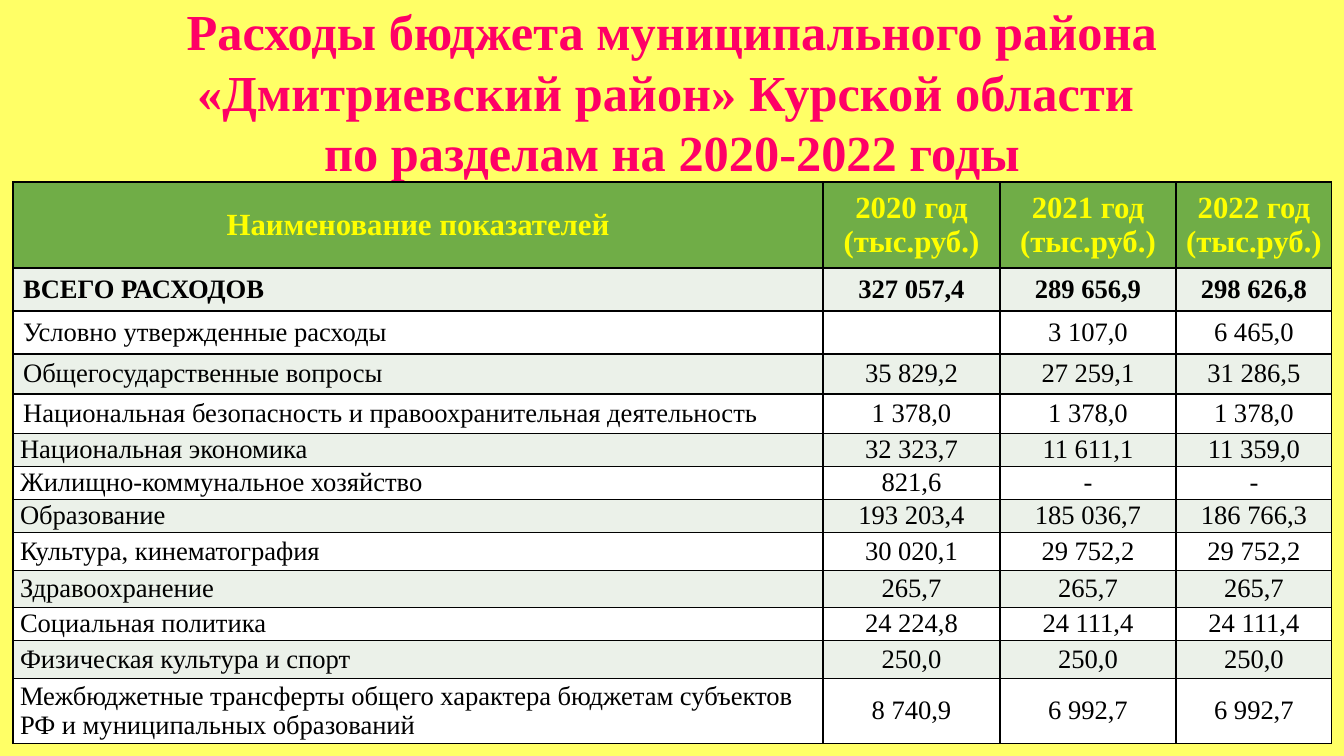
import pptx
import pptx.util
import pptx.dml.color
import pptx.enum.text
from lxml import etree

TITLE = ("Расходы бюджета муниципального района «Дмитриевский район» Курской области "
         "\vпо разделам на 2020-2022 годы")
HEADER = ("Наименование показателей", "2020 год (тыс.руб.)", "2021 год (тыс.руб.)",
          "2022 год (тыс.руб.)")
# Each entry: row height in px, then the cell texts
ROWS = [
    (86, HEADER),
    (43, ("ВСЕГО РАСХОДОВ", "327 057,4", "289 656,9", "298 626,8")),
    (43, ("Условно утвержденные расходы", "", "3 107,0", "6 465,0")),
    (40, ("Общегосударственные вопросы", "35 829,2", "27 259,1", "31 286,5")),
    (39, ("Национальная безопасность и правоохранительная деятельность",
          "1 378,0", "1 378,0", "1 378,0")),
    (33, ("Национальная экономика", "32 323,7", "11 611,1", "11 359,0")),
    (33, ("Жилищно-коммунальное хозяйство", "821,6", "-", "-")),
    (33, ("Образование", "193 203,4", "185 036,7", "186 766,3")),
    (38, ("Культура, кинематография", "30 020,1", "29 752,2", "29 752,2")),
    (37, ("Здравоохранение", "265,7", "265,7", "265,7")),
    (33, ("Социальная политика", "24 224,8", "24 111,4", "24 111,4")),
    (38, ("Физическая культура и спорт", "250,0", "250,0", "250,0")),
    (65, ("Межбюджетные трансферты общего характера бюджетам субъектов РФ "
          "и муниципальных образований", "8 740,9", "6 992,7", "6 992,7")),
]
COLUMN_WIDTHS = (810, 177, 176, 156)
WIDE_INSET_ROWS = 5  # labels of the first rows keep the default insets
FONT = "Times New Roman"
COLORS = {"page": "FFFF66", "title": "FF0066", "header": "70AD47", "header text": "FFFF00",
          "band": "EBF1E9", "plain": "FFFFFF", "ink": "000000"}
PAGE_WIDTH, PAGE_HEIGHT = 1344, 756
TABLE_LEFT, TABLE_TOP = 13, 182
SCALE = 12192000 / PAGE_WIDTH


def px(length):
    return pptx.util.Emu(round(length * SCALE))


def rgb(name):
    return pptx.dml.color.RGBColor.from_string(COLORS[name])


def format_paragraph(para, size, color, bold, centered):
    align = pptx.enum.text.PP_ALIGN
    para.alignment = align.CENTER if centered else align.LEFT
    para.font.name = FONT
    para.font.size = pptx.util.Pt(size)
    para.font.bold = bold
    para.font.color.rgb = rgb(color)


def add_borders(cell):
    properties = cell._tc.get_or_add_tcPr()
    namespace = "http://schemas.openxmlformats.org/drawingml/2006/main"
    for index, side in enumerate("LRTB"):
        line = etree.fromstring(
            f'<a:ln{side} xmlns:a="{namespace}" w="12700"><a:solidFill>'
            f'<a:srgbClr val="{COLORS["ink"]}"/></a:solidFill></a:ln{side}>')
        properties.insert(index, line)


def add_title(page):
    box = page.shapes.title
    box.left, box.top, box.width, box.height = px(0), px(0), px(PAGE_WIDTH), px(TABLE_TOP)
    frame = box.text_frame
    frame.text = TITLE
    frame.word_wrap = True
    frame.auto_size = pptx.enum.text.MSO_AUTO_SIZE.NONE
    frame.vertical_anchor = pptx.enum.text.MSO_ANCHOR.MIDDLE
    frame.margin_top = frame.margin_bottom = 0
    para = frame.paragraphs[0]
    para.line_spacing = 1.0
    format_paragraph(para, 36, "title", True, True)


def fill_cell(cell, text, row, column):
    header = row == 0
    cell.text = text
    cell.vertical_anchor = pptx.enum.text.MSO_ANCHOR.MIDDLE
    if not header and (column > 0 or row >= WIDE_INSET_ROWS):
        cell.margin_left = cell.margin_right = px(7)
        cell.margin_top = cell.margin_bottom = 0
    format_paragraph(cell.text_frame.paragraphs[0], 22 if header else 19,
                     "header text" if header else "ink", row < 2, header or column > 0)
    cell.fill.solid()
    cell.fill.fore_color.rgb = rgb("header" if header else "band" if row % 2 else "plain")
    add_borders(cell)


def add_budget_table(page):
    height = sum(row_height for row_height, _ in ROWS)
    table = page.shapes.add_table(len(ROWS), len(COLUMN_WIDTHS), px(TABLE_LEFT), px(TABLE_TOP),
                                  px(sum(COLUMN_WIDTHS)), px(height)).table
    for column, width in enumerate(COLUMN_WIDTHS):
        table.columns[column].width = px(width)
    for row, (row_height, texts) in enumerate(ROWS):
        table.rows[row].height = px(row_height)
        for column, text in enumerate(texts):
            fill_cell(table.cell(row, column), text, row, column)


def main():
    deck = pptx.Presentation()
    deck.slide_width, deck.slide_height = px(PAGE_WIDTH), px(PAGE_HEIGHT)
    page = deck.slides.add_slide(deck.slide_layouts[5])
    page.background.fill.solid()
    page.background.fill.fore_color.rgb = rgb("page")
    add_title(page)
    add_budget_table(page)
    deck.save("out.pptx")


if __name__ == "__main__":
    main()
